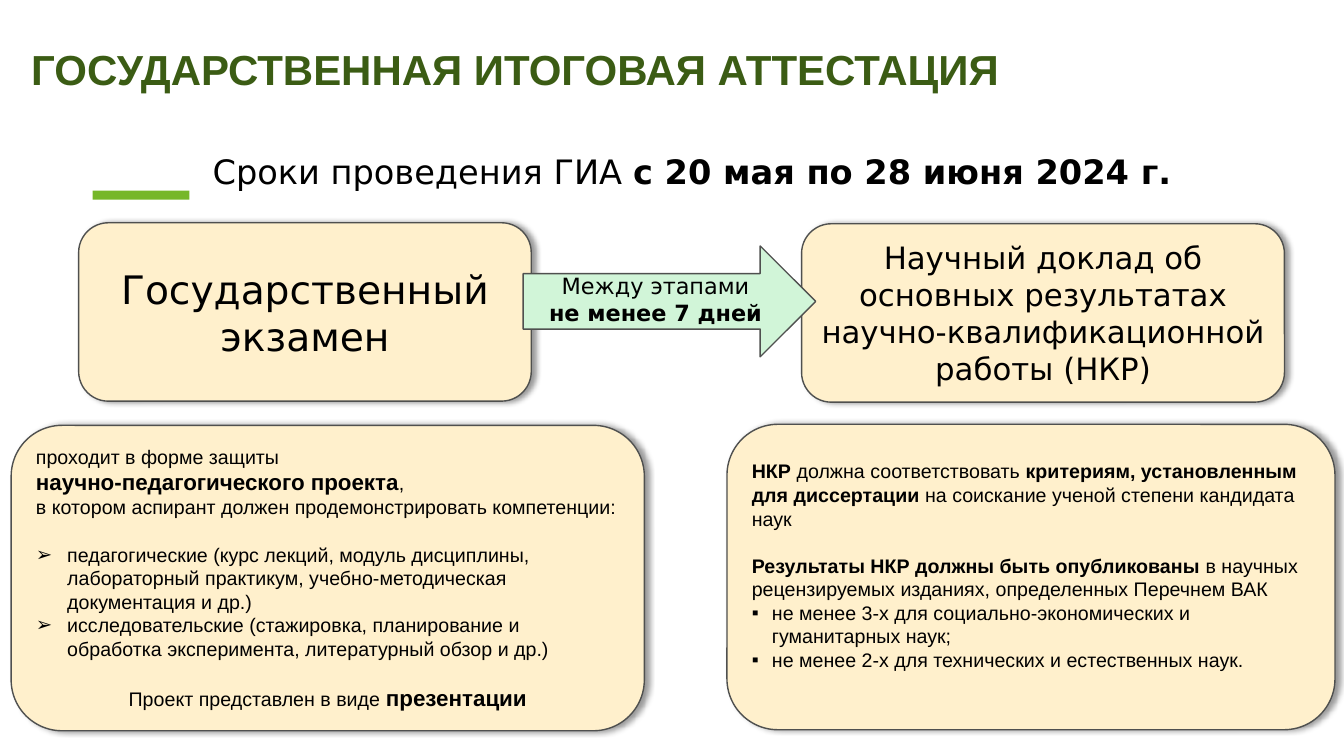
import lxml.etree
import pptx
import pptx.dml.color
import pptx.enum.shapes
import pptx.enum.text
import pptx.oxml
import pptx.oxml.ns
import pptx.util

SHAPES = pptx.enum.shapes.MSO_SHAPE
ALIGN = pptx.enum.text.PP_ALIGN
ANCHOR = pptx.enum.text.MSO_ANCHOR
CREAM, MINT, GREEN, DARK_GREEN, GREY = "FFF0CC", "D1F5D8", "76B729", "3B5C14", "4F504F"
BLANK_LINE = 17

presentation = pptx.Presentation()
presentation.slide_width = pptx.util.Inches(13.33)
presentation.slide_height = pptx.util.Inches(7.5)
slide = presentation.slides.add_slide(presentation.slide_layouts[6])


def add_block(kind, place, fill=None, line=None, shadow=False):
    width, height = presentation.slide_width, presentation.slide_height
    box = [round(share * side / 100) for share, side in zip(place, (width, height, width, height))]
    if kind is None:
        return slide.shapes.add_textbox(*box)
    shape = slide.shapes.add_shape(kind, *box)
    shape.shadow.inherit = False
    shape.fill.solid()
    shape.fill.fore_color.rgb = pptx.dml.color.RGBColor.from_string(fill)
    if line:
        shape.line.color.rgb = pptx.dml.color.RGBColor.from_string(line)
        shape.line.width = pptx.util.Pt(1)
    else:
        shape.line.fill.background()
    if shadow:
        effects = shape._element.spPr.find(pptx.oxml.ns.qn("a:effectLst"))
        effects.append(pptx.oxml.parse_xml(
            f'<a:outerShdw {pptx.oxml.ns.nsdecls("a")} blurRad="50800" dist="38100" dir="0" '
            'algn="l" rotWithShape="0"><a:srgbClr val="000000"><a:alpha val="40000"/>'
            '</a:srgbClr></a:outerShdw>'))
    return shape


def write_text(shape, lines, size, font="Arial", color="000000", align=ALIGN.LEFT,
               anchor=ANCHOR.MIDDLE, spacing=None, bold_size=None, bullet=None,
               indent=0, top=0.05, bottom=0.05):
    frame = shape.text_frame
    frame.word_wrap = True
    frame.vertical_anchor = anchor
    frame.margin_top = pptx.util.Inches(top)
    frame.margin_bottom = pptx.util.Inches(bottom)
    for index, (text, gap, style) in enumerate(lines):
        paragraph = frame.paragraphs[0] if index == 0 else frame.add_paragraph()
        paragraph.alignment = ALIGN.CENTER if style == "center" else align
        paragraph.space_before = pptx.util.Pt(gap)
        if spacing:
            paragraph.line_spacing = spacing
        if style == "bullet":
            properties = paragraph._p.get_or_add_pPr()
            properties.set("marL", str(pptx.util.Inches(indent)))
            properties.set("indent", str(-pptx.util.Inches(indent)))
            for tag, key, value in (("a:buFont", "typeface", font), ("a:buChar", "char", bullet)):
                lxml.etree.SubElement(properties, pptx.oxml.ns.qn(tag)).set(key, value)
        for position, part in enumerate(text.split("*")):
            if part:
                run = paragraph.add_run()
                run.text = part
                run.font.name = font
                run.font.bold = position % 2 == 1
                run.font.size = pptx.util.Pt(bold_size if run.font.bold and bold_size else size)
                run.font.color.rgb = pptx.dml.color.RGBColor.from_string(color)


add_block(SHAPES.RECTANGLE, (6.9, 25.2, 7.2, 1.2), GREEN)

title = add_block(None, (1.58, 3.47, 76.97, 12))
write_text(title, [("*ГОСУДАРСТВЕННАЯ ИТОГОВАЯ АТТЕСТАЦИЯ*", 0, None)], 30,
           color=DARK_GREEN, spacing=0.9)

dates = add_block(None, (15.08, 19.87, 76.52, 8.27))
write_text(dates, [("Сроки проведения ГИА *с 20 мая по 28 июня 2024 г.*", 0, None)], 24,
           font="DejaVu Sans", anchor=ANCHOR.TOP, spacing=0.9)

stages = [
    ((5.85, 29.47, 33.68, 23.6), "Государственный экзамен", 28),
    ((59.64, 29.6, 35.93, 23.6),
     "Научный доклад об основных результатах научно-квалификационной работы (НКР)", 22),
]
for place, text, size in stages:
    stage = add_block(SHAPES.FLOWCHART_ALTERNATE_PROCESS, place, CREAM, GREY, True)
    write_text(stage, [(text, 0, "center")], size, font="DejaVu Sans")

exam_lines = [
    ("проходит в форме защиты", 0, None),
    ("*научно-педагогического проекта*,", 0, None),
    ("в котором аспирант должен продемонстрировать компетенции:", 0, None),
    ("педагогические (курс лекций, модуль дисциплины, лабораторный практикум, "
     "учебно-методическая документация и др.)", BLANK_LINE, "bullet"),
    ("исследовательские (стажировка, планирование и обработка эксперимента, "
     "литературный обзор и др.)", 0, "bullet"),
    ("Проект представлен в виде *презентации*", BLANK_LINE, "center"),
]
report_lines = [
    ("*НКР *должна соответствовать *критериям, установленным для диссертации* "
     "на соискание ученой степени кандидата наук", 0, None),
    ("*Результаты НКР должны быть опубликованы *в научных рецензируемых изданиях, "
     "определенных Перечнем ВАК", BLANK_LINE, None),
    ("не менее 3-х для социально-экономических и гуманитарных наук;", 0, "bullet"),
    ("не менее 2-х для технических и естественных наук.", 0, "bullet"),
]
details = [
    ((0.83, 56.27, 47.11, 40.4), exam_lines, dict(bold_size=16, bullet="➢", indent=0.31)),
    ((54.09, 56.13, 45.24, 40.4), report_lines, dict(bullet="▪", indent=0.2, bottom=0.28)),
]
for place, lines, options in details:
    detail = add_block(SHAPES.FLOWCHART_ALTERNATE_PROCESS, place, CREAM, GREY, True)
    write_text(detail, lines, 14, **options)

arrow = add_block(SHAPES.RIGHT_ARROW, (38.93, 32.53, 21.76, 14.67), MINT, GREY)
write_text(arrow, [("Между этапами", 0, "center"), ("*не менее 7 дней*", 0, "center")], 16,
           font="DejaVu Sans", top=0, bottom=0.04)

presentation.save("out.pptx")
